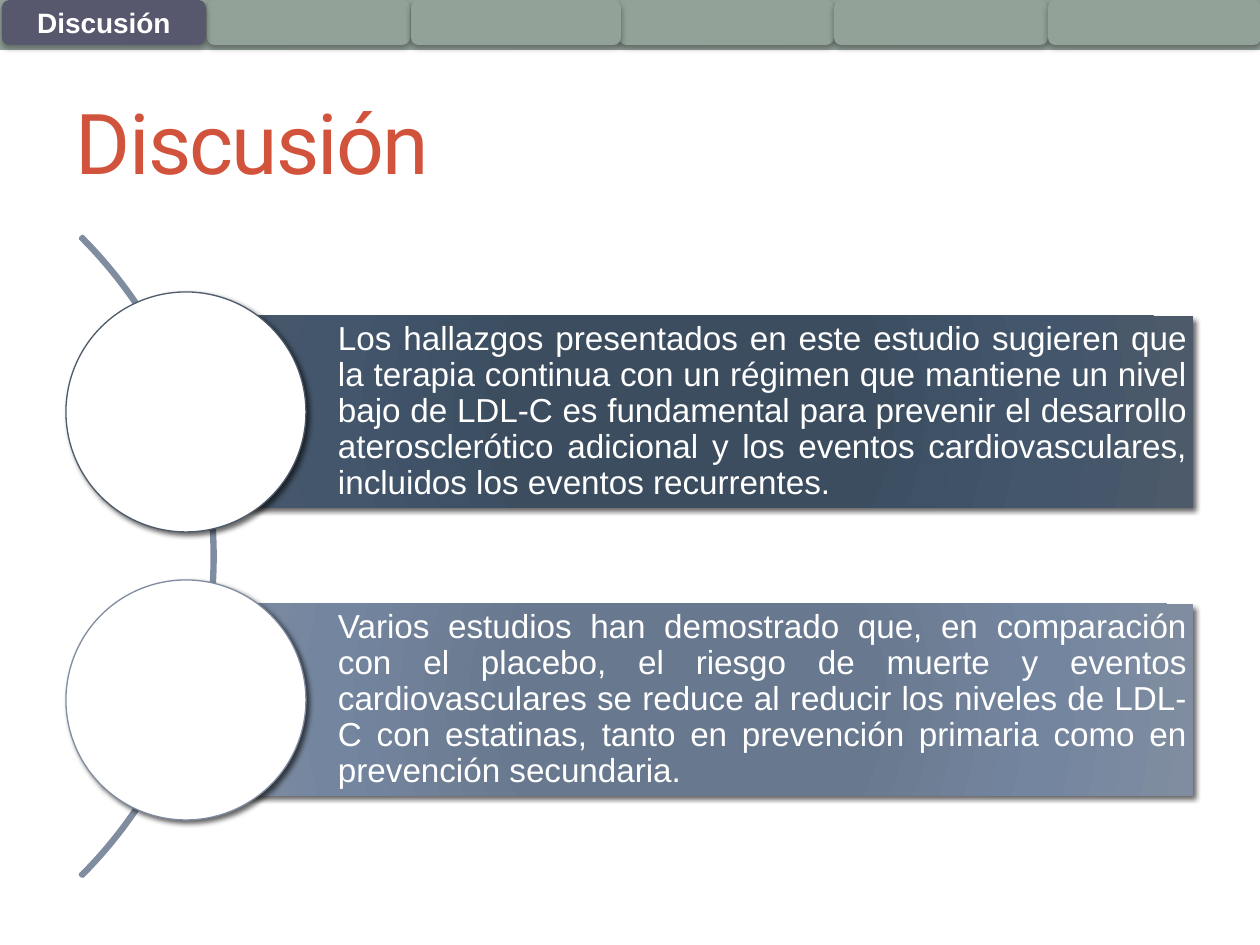
from pptx import Presentation
from pptx.dml.color import RGBColor
from pptx.enum.shapes import MSO_SHAPE
from pptx.enum.text import MSO_ANCHOR, PP_ALIGN
from pptx.oxml import parse_xml
from pptx.oxml.ns import nsdecls
from pptx.util import Emu, Pt

RECT, ROUND = MSO_SHAPE.RECTANGLE, MSO_SHAPE.ROUNDED_RECTANGLE
OVAL, ARC = MSO_SHAPE.OVAL, MSO_SHAPE.BLOCK_ARC
MIDDLE = MSO_ANCHOR.MIDDLE
LEFT, CENTER, JUSTIFY = PP_ALIGN.LEFT, PP_ALIGN.CENTER, PP_ALIGN.JUSTIFY

SCALE = 914400 / 126
COLORS = {
    "sage": "93A299", "plum": "57576E", "brick": "D2533C", "white": "FFFFFF",
    "slate": "4C5A6A", "mist": "808DA0",
}
GRADIENTS = {
    "slate": [(0, "3B4D61"), (34, "3C4D60"), (70, "43566B"), (100, "4C5A6A")],
    "mist": [(0, "677790"), (34, "68788E"), (70, "74869F"), (100, "808DA0")],
}
TAB_SHADOW = (32, 3.5, 2.2, 90)
BODY_SHADOW = (60, 3, 2, 45)
TAB_TEXT = {"size": Pt(16), "name": "Arial", "bold": True}
TITLE_TEXT = {"size": Pt(48), "name": "Roboto"}
BODY_TEXT = {"size": Pt(19), "name": "Arial"}
BODY_MARGINS = (152, 6, 6, 6)

TABS = [(207, 203), (2, 204), (619, 215), (834, 214), (1048, 213), (411, 210)]
FINDINGS = [
    ("slate", "Los hallazgos presentados en este estudio sugieren que la terapia "
     "continua con un régimen que mantiene un nivel bajo de LDL-C es fundamental "
     "para prevenir el desarrollo aterosclerótico adicional y los eventos "
     "cardiovasculares, incluidos los eventos recurrentes."),
    ("mist", "Varios estudios han demostrado que, en comparación con el placebo, el "
     "riesgo de muerte y eventos cardiovasculares se reduce al reducir los niveles "
     "de LDL-C con estatinas, tanto en prevención primaria como en prevención "
     "secundaria."),
]


def px(length):
    return Emu(round(length * SCALE))


def rgb(name):
    return RGBColor.from_string(COLORS[name])


class SlideBuilder:
    """Holds the style and the current slide, and draws each kind of element."""

    def __init__(self, slide):
        self.slide = slide

    def shape(self, kind, place, fill=None, line=None, weight=0.75, shadow=None):
        shape = self.slide.shapes.add_shape(kind, *map(px, place))
        shape.shadow.inherit = False
        if fill:
            shape.fill.solid()
            shape.fill.fore_color.rgb = rgb(fill)
        else:
            shape.fill.background()
        if line:
            shape.line.color.rgb = rgb(line)
            shape.line.width = Pt(weight)
        else:
            shape.line.fill.background()
        if shadow:
            self.cast_shadow(shape, *shadow)
        return shape

    def cast_shadow(self, shape, alpha, blur, distance, angle):
        effects = shape._element.spPr.find("{*}effectLst")
        effects.append(parse_xml(
            f'<a:outerShdw {nsdecls("a")} blurRad="{Pt(blur)}" dist="{Pt(distance)}" '
            f'dir="{angle * 60000}" algn="ctr" rotWithShape="0"><a:srgbClr val="000000">'
            f'<a:alpha val="{alpha * 1000}"/></a:srgbClr></a:outerShdw>'))

    def band(self, place, tone):
        band = self.shape(RECT, place, tone, shadow=BODY_SHADOW)
        stops = "".join(
            f'<a:gs pos="{position * 1000}"><a:srgbClr val="{color}"/></a:gs>'
            for position, color in GRADIENTS[tone])
        gradient = parse_xml(
            f'<a:gradFill {nsdecls("a")} rotWithShape="1"><a:gsLst>{stops}</a:gsLst>'
            '<a:path path="circle"><a:fillToRect l="100000" t="100000" r="100000" '
            'b="100000"/></a:path></a:gradFill>')
        solid = band._element.spPr.find("{*}solidFill")
        solid.getparent().replace(solid, gradient)

    def arc(self, place, color, weight, adjustments):
        arc = self.shape(ARC, place, line=color, weight=weight)
        for index, value in enumerate(adjustments):
            arc.adjustments[index] = value

    def label(self, box, text, style, color, align, margins=(13, 6, 13, 6), spacing=1.0):
        frame = box.text_frame
        frame.word_wrap = True
        frame.vertical_anchor = MIDDLE
        for side, margin in zip(("left", "top", "right", "bottom"), margins):
            setattr(frame, f"margin_{side}", px(margin))
        para = frame.paragraphs[0]
        para.alignment = align
        para.line_spacing = spacing
        span = para.add_run()
        span.text = text
        for name, value in style.items():
            setattr(span.font, name, value)
        span.font.color.rgb = rgb(color)
        return span

    def text(self, place, *content, **layout):
        box = self.slide.shapes.add_textbox(*map(px, place))
        return self.label(box, *content, **layout)


def main():
    deck = Presentation()
    deck.slide_width, deck.slide_height = px(1260), px(945)
    page = SlideBuilder(deck.slides.add_slide(deck.slide_layouts[6]))

    page.shape(RECT, (0, 0, 1260, 50), "sage")
    for left, width in TABS:
        active = left == 2
        tab = page.shape(ROUND, (left, 0, width, 45), "plum" if active else "sage",
                         shadow=TAB_SHADOW)
        if active:
            page.label(tab, "Discusión", TAB_TEXT, "white", CENTER)

    title = page.text((63, 73, 1134, 136), "Discusión", TITLE_TEXT, "brick", LEFT)
    title._r.get_or_add_rPr().set("spc", "-100")

    page.arc((-690, 104, 905, 905), "mist", 2.08, (189, 27, 0.003))
    for index, (tone, finding) in enumerate(FINDINGS):
        top = 316 + 288 * index
        place = (186, top, 1007, 192)
        page.band(place, tone)
        page.text(place, finding, BODY_TEXT, "white", JUSTIFY,
                  margins=BODY_MARGINS, spacing=0.9)
        page.shape(OVAL, (66, top - 24, 240, 240), "white", tone, shadow=BODY_SHADOW)

    deck.save("out.pptx")


if __name__ == "__main__":
    main()
